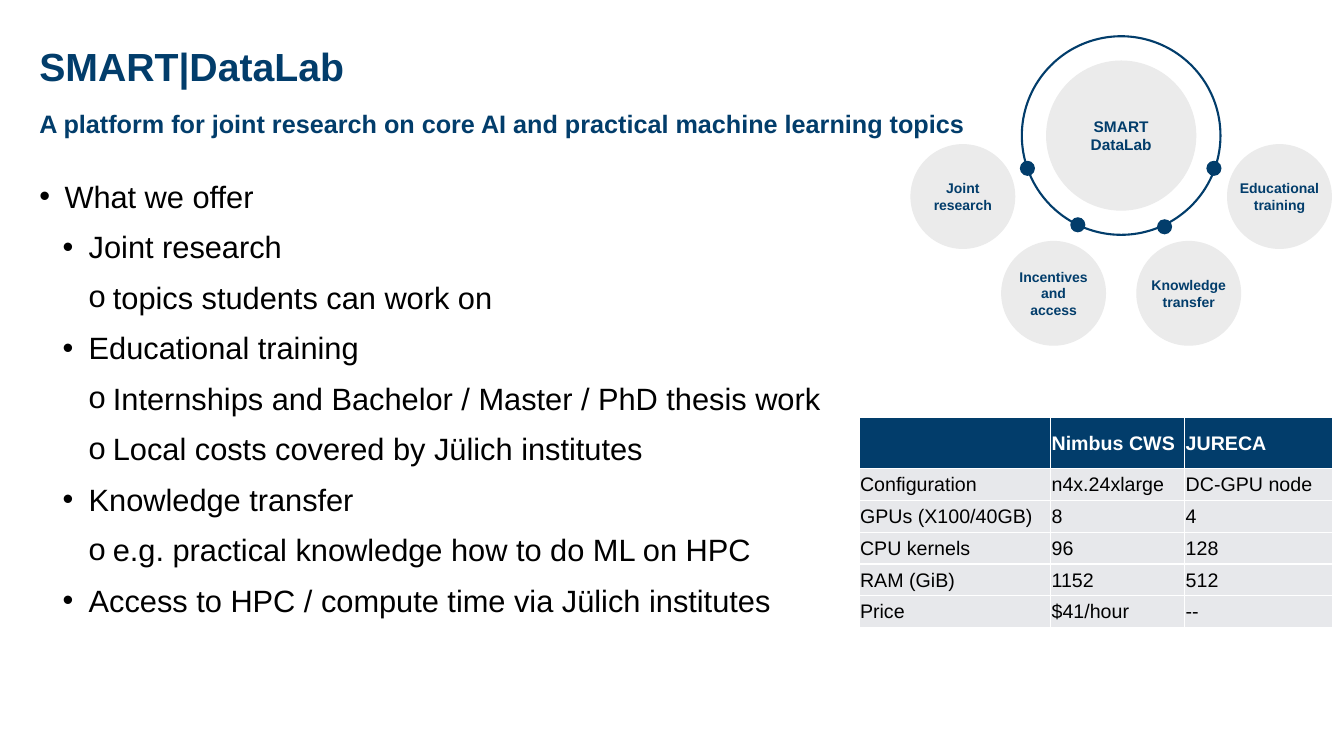
from dataclasses import dataclass

from pptx import Presentation
from pptx.dml.color import RGBColor
from pptx.enum.shapes import MSO_SHAPE
from pptx.enum.text import MSO_ANCHOR, PP_ALIGN
from pptx.oxml.ns import qn
from pptx.util import Inches, Pt
from lxml.etree import SubElement

# Content
TITLE = "SMART|DataLab"
SUBTITLE = "A platform for joint research on core AI and practical machine learning topics"
OFFERS = [  # level, text
    (0, "What we offer"),
    (1, "Joint research"),
    (2, "topics students can work on"),
    (1, "Educational training"),
    (2, "Internships and Bachelor / Master / PhD thesis work"),
    (2, "Local costs covered by Jülich institutes"),
    (1, "Knowledge transfer"),
    (2, "e.g. practical knowledge how to do ML on HPC"),
    (1, "Access to HPC / compute time via Jülich institutes"),
]
BULLETS = [("•", 0.25, 0.25), ("•", 0.49, 0.26), ("o", 0.73, 0.24)]  # mark, indent, hang
HUB = ["SMART DataLab"]
SATELLITES = [  # offset from the hub axis, centre height, lines
    (-1.57, 1.95, ["Joint", "research"]),
    (1.57, 1.95, ["Educational", "training"]),
    (0.67, 2.91, ["Knowledge", "transfer"]),
    (-0.67, 2.91, ["Incentives", "and", "access"]),
]
DOTS = [(-0.93, 1.67), (-0.43, 2.23), (0.43, 2.25), (0.92, 1.67)]
TABLE = [
    ["", "Nimbus CWS", "JURECA"],
    ["Configuration", "n4x.24xlarge", "DC-GPU node"],
    ["GPUs (X100/40GB)", "8", "4"],
    ["CPU kernels", "96", "128"],
    ["RAM (GiB)", "1152", "512"],
    ["Price", "$41/hour", "--"],
]
COLUMN_WIDTHS = [1.9, 1.33, 1.47]
HEADER_HEIGHT, ROW_HEIGHT = 0.51, 0.315
HUB_X, HUB_Y = 11.12, 1.345


@dataclass(frozen=True)
class Theme:
    font: str = "Arial"
    navy: str = "023D6B"
    black: str = "000000"
    white: str = "FFFFFF"
    disc: str = "EBEBEB"
    cell: str = "E7E8EB"
    title: int = 28
    subtitle: int = 18
    body: int = 22
    hub: int = 11
    satellite: int = 10
    table: int = 14


THEME = Theme()


def rgb(value):
    return RGBColor.from_string(value)


def add_run(paragraph, text, size, color, bold=False):
    run = paragraph.add_run()
    run.text = text
    font = run.font
    font.name, font.size, font.bold = THEME.font, Pt(size), bold
    font.color.rgb = rgb(color)


def next_paragraph(frame, index):
    return frame.paragraphs[0] if index == 0 else frame.add_paragraph()


def clear_frame(shape):
    frame = shape.text_frame
    frame.word_wrap = True
    frame.vertical_anchor = MSO_ANCHOR.TOP
    frame.margin_left = frame.margin_right = frame.margin_top = frame.margin_bottom = 0
    return frame


def add_heading(shape, text, size):
    paragraph = clear_frame(shape).paragraphs[0]
    paragraph.alignment = PP_ALIGN.LEFT
    paragraph.line_spacing = 1.14
    add_run(paragraph, text, size, THEME.navy, bold=True)


def add_bullet(paragraph, level):
    mark, indent, hang = BULLETS[level]
    properties = paragraph._p.get_or_add_pPr()
    properties.set("marL", str(Inches(indent)))
    properties.set("indent", str(-Inches(hang)))
    SubElement(properties, qn("a:buFont")).set("typeface", THEME.font)
    SubElement(properties, qn("a:buChar")).set("char", mark)


def add_circle(shapes, center_x, center_y, diameter, fill=None):
    circle = shapes.add_shape(
        MSO_SHAPE.OVAL, Inches(center_x - diameter / 2), Inches(center_y - diameter / 2),
        Inches(diameter), Inches(diameter))
    circle.shadow.inherit = False
    if fill:
        circle.fill.solid()
        circle.fill.fore_color.rgb = rgb(fill)
        circle.line.fill.background()
    else:
        circle.fill.background()
        circle.line.color.rgb = rgb(THEME.navy)
        circle.line.width = Pt(1.5)
    return circle


def label_circle(circle, lines, size, wrap):
    frame = circle.text_frame
    frame.word_wrap = wrap
    frame.vertical_anchor = MSO_ANCHOR.MIDDLE
    for index, line in enumerate(lines):
        paragraph = next_paragraph(frame, index)
        paragraph.alignment = PP_ALIGN.CENTER
        add_run(paragraph, line, size, THEME.navy, bold=True)


def style_cell(cell, text, header):
    cell.margin_left = cell.margin_right = cell.margin_top = Inches(0.01)
    cell.margin_bottom = 0
    cell.vertical_anchor = MSO_ANCHOR.MIDDLE
    properties = cell._tc.get_or_add_tcPr()
    for side in ("a:lnL", "a:lnR", "a:lnT", "a:lnB"):
        border = SubElement(properties, qn(side), w=str(Pt(1)))
        fill = SubElement(border, qn("a:solidFill"))
        SubElement(fill, qn("a:srgbClr"), val=THEME.white)
    cell.fill.solid()
    cell.fill.fore_color.rgb = rgb(THEME.navy if header else THEME.cell)
    paragraph = cell.text_frame.paragraphs[0]
    if text:
        add_run(paragraph, text, THEME.table, THEME.white if header else THEME.black, header)
    else:
        paragraph.font.size = Pt(THEME.table)


def main():
    presentation = Presentation()
    presentation.slide_width, presentation.slide_height = Inches(13.33), Inches(7.5)
    slide = presentation.slides.add_slide(presentation.slide_layouts[5])
    shapes = slide.shapes

    # Title and subtitle
    title = shapes.title
    title.left, title.top = Inches(0.39), Inches(0.35)
    title.width, title.height = Inches(12.52), Inches(1.23)
    add_heading(title, TITLE, THEME.title)
    subtitle = shapes.add_textbox(Inches(0.39), Inches(1.03), Inches(12.52), Inches(0.56))
    add_heading(subtitle, SUBTITLE, THEME.subtitle)

    # Offer list
    offers = shapes.add_textbox(Inches(0.39), Inches(1.71), Inches(10.4), Inches(4.61))
    frame = clear_frame(offers)
    for index, (level, text) in enumerate(OFFERS):
        paragraph = next_paragraph(frame, index)
        paragraph.level = level
        paragraph.line_spacing = 1.14
        paragraph.space_after = Pt(6)
        add_bullet(paragraph, level)
        add_run(paragraph, text, THEME.body, THEME.black)

    # Hub diagram
    diagram = shapes.add_group_shape().shapes
    add_circle(diagram, HUB_X, HUB_Y, 1.97)
    for offset, center_y in DOTS:
        add_circle(diagram, HUB_X + offset, center_y, 0.15, THEME.navy)
    hub = add_circle(diagram, HUB_X, HUB_Y, 1.49, THEME.disc)
    label_circle(hub, HUB, THEME.hub, wrap=True)
    for offset, center_y, lines in SATELLITES:
        satellite = add_circle(diagram, HUB_X + offset, center_y, 1.04, THEME.disc)
        label_circle(satellite, lines, THEME.satellite, wrap=False)

    # Comparison table
    height = HEADER_HEIGHT + ROW_HEIGHT * (len(TABLE) - 1)
    table = shapes.add_table(len(TABLE), len(COLUMN_WIDTHS), Inches(8.52), Inches(4.14),
                             Inches(sum(COLUMN_WIDTHS)), Inches(height)).table
    for column, width in zip(table.columns, COLUMN_WIDTHS):
        column.width = Inches(width)
    for row_index, texts in enumerate(TABLE):
        header = row_index == 0
        table.rows[row_index].height = Inches(HEADER_HEIGHT if header else ROW_HEIGHT)
        for column_index, text in enumerate(texts):
            style_cell(table.cell(row_index, column_index), text, header)

    presentation.save("out.pptx")


if __name__ == "__main__":
    main()
